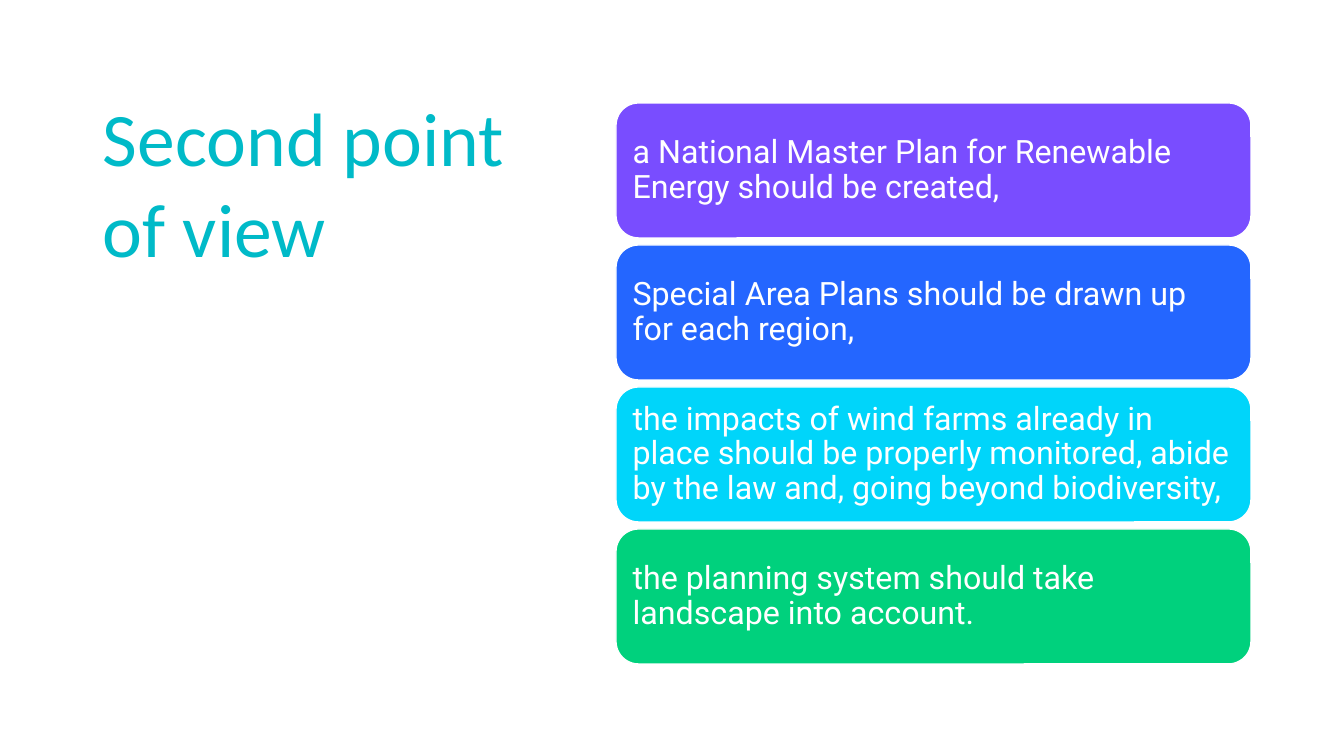
from dataclasses import dataclass

from pptx import Presentation
from pptx.dml.color import RGBColor
from pptx.enum.shapes import MSO_SHAPE
from pptx.enum.text import MSO_ANCHOR, MSO_AUTO_SIZE, PP_ALIGN
from pptx.util import Emu, Pt

SCALE = 914400 / 100.8


@dataclass(frozen=True)
class Theme:
    head: str = "00BAC8"
    white: str = "FFFFFF"
    cards: tuple = ("794DFF", "2466FF", "00D5FA", "00D17D")
    head_font: str = "Calibri"
    card_font: str = "Roboto"
    head_size: int = 54
    card_size: int = 23


THEME = Theme()
TITLE = "Second point of view"
POINTS = (
    "a National Master Plan for Renewable Energy should be created,",
    "Special Area Plans should be drawn up for each region,",
    "the impacts of wind farms already in place should be properly monitored, "
    "abide by the law and, going beyond biodiversity,",
    "the planning system should take landscape into account.",
)


def px(count):
    return Emu(round(count * SCALE))


def color(code):
    return RGBColor.from_string(code)


def write(frame, text, font, size, code, anchor, space):
    frame.word_wrap = True
    frame.auto_size = MSO_AUTO_SIZE.NONE
    frame.vertical_anchor = anchor
    frame.margin_left = frame.margin_right = px(10)
    para = frame.paragraphs[0]
    para.alignment = PP_ALIGN.LEFT
    para.line_spacing = space
    run = para.add_run()
    run.text = text
    run.font.name = font
    run.font.size = Pt(size)
    run.font.color.rgb = color(code)


def add_title(slide, box):
    title = slide.shapes.title
    title.left, title.top, title.width, title.height = map(px, box)
    write(title.text_frame, TITLE, THEME.head_font, THEME.head_size,
          THEME.head, MSO_ANCHOR.TOP, 1.0)


def add_cards(slide, box, gap):
    """Stack equal cards, one for each point, to fill the box."""
    left, top, width, height = box
    pitch = (height + gap) // len(POINTS)
    for row, (text, fill) in enumerate(zip(POINTS, THEME.cards)):
        card = slide.shapes.add_shape(
            MSO_SHAPE.ROUNDED_RECTANGLE, px(left), px(top + row * pitch),
            px(width), px(pitch - gap))
        card.shadow.inherit = False
        card.fill.solid()
        card.fill.fore_color.rgb = color(fill)
        card.line.color.rgb = color(THEME.white)
        card.line.width = Pt(1)
        write(card.text_frame, text, THEME.card_font, THEME.card_size,
              THEME.white, MSO_ANCHOR.MIDDLE, 0.9)


def main():
    deck = Presentation()
    deck.slide_width, deck.slide_height = px(1344), px(756)
    slide = deck.slides.add_slide(deck.slide_layouts.get_by_name("Title Only"))
    add_title(slide, (93, 86, 445, 595))
    add_cards(slide, (616, 103, 635, 561), 7)
    deck.save("out.pptx")


if __name__ == "__main__":
    main()
